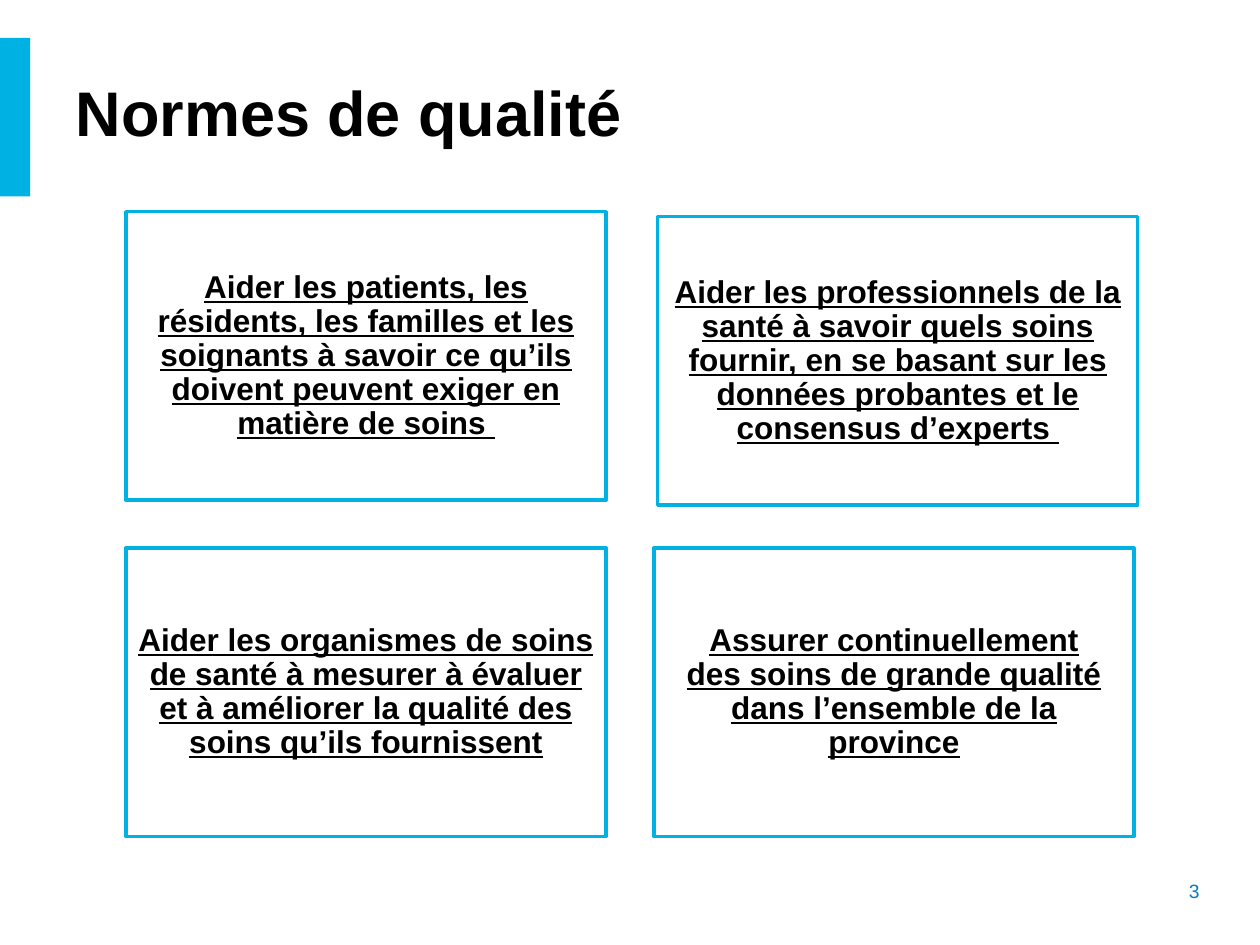
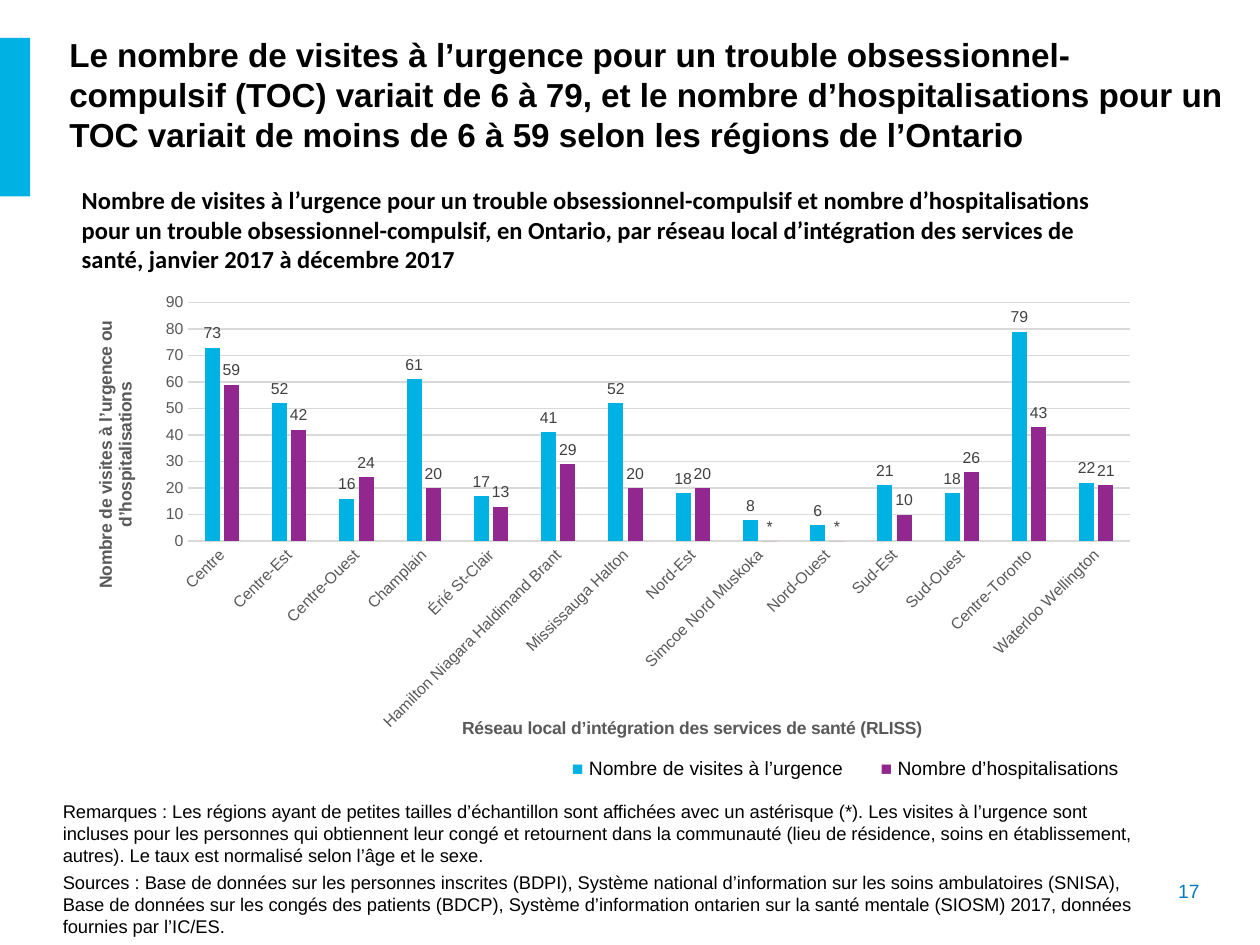
from lxml.etree import SubElement
from pptx import Presentation
from pptx.chart.data import CategoryChartData
from pptx.dml.color import RGBColor
from pptx.enum.chart import XL_CHART_TYPE, XL_LABEL_POSITION, XL_TICK_MARK
from pptx.enum.shapes import MSO_SHAPE
from pptx.enum.text import MSO_ANCHOR, MSO_AUTO_SIZE, PP_ALIGN
from pptx.oxml.ns import qn
from pptx.util import Inches, Pt

COLORS = {
    "text": "000000",
    "accent": "00B2E3",
    "second": "92278F",
    "number": "047BC1",
    "axis": "595959",
    "grid": "D9D9D9",
    "label": "404040",
}
FONT = "Arial"

STANDARDS = [
    (1, 1.68, "Aider les patients, les résidents, les familles et les soignants à savoir "
              "ce qu’ils doivent peuvent exiger en matière de soins "),
    (5.22, 1.72, "Aider les professionnels de la santé à savoir quels soins fournir, en se "
                 "basant sur les données probantes et le consensus d’experts "),
    (1, 4.35, "Aider les organismes de soins de santé à mesurer à évaluer et à améliorer "
              "la qualité des soins qu’ils fournissent"),
    (5.19, 4.35, "Assurer continuellement\ndes soins de grande qualité dans l’ensemble "
                 "de la province"),
]

REGIONS = [
    ("Centre", 73, 59),
    ("Centre-Est", 52, 42),
    ("Centre-Ouest", 16, 24),
    ("Champlain", 61, 20),
    ("Érié St-Clair", 17, 13),
    ("Hamilton Niagara Haldimand Brant", 41, 29),
    ("Mississauga Halton", 52, 20),
    ("Nord-Est", 18, 20),
    ("Simcoe Nord Muskoka", 8, 0),
    ("Nord-Ouest", 6, 0),
    ("Sud-Est", 21, 10),
    ("Sud-Ouest", 18, 26),
    ("Centre-Toronto", 79, 43),
    ("Waterloo Wellington", 22, 21),
]
SERIES = [
    ("Nombre de visites à l’urgence", "accent"),
    ("Nombre d’hospitalisations", "second"),
]

NOTES = [
    "Remarques : Les régions ayant de petites tailles d’échantillon sont affichées avec un "
    "astérisque (*). Les visites à l’urgence sont incluses pour les personnes qui obtiennent "
    "leur congé et retournent dans la communauté (lieu de résidence, soins en établissement, "
    "autres). Le taux est normalisé selon l’âge et le sexe.",
    "Sources : Base de données sur les personnes inscrites (BDPI), Système national "
    "d’information sur les soins ambulatoires (SNISA), Base de données sur les congés des "
    "patients (BDCP), Système d’information ontarien sur la santé mentale (SIOSM) 2017, "
    "données fournies par l’IC/ES.",
]


def rgb(name):
    return RGBColor.from_string(COLORS[name])


def style_font(font, size, color="text", bold=False, name=FONT):
    font.name = name
    font.size = Pt(size)
    font.bold = bold
    font.color.rgb = rgb(color)


def add_span(para, text, size, color="text", bold=False, name=FONT, underline=False):
    for index, line in enumerate(text.split("\n")):
        if index:
            para.add_line_break()
        span = para.add_run()
        span.text = line
        style_font(span.font, size, color, bold, name)
        if underline:
            span.font.underline = True


def add_text_box(page, left, top, width, height):
    box = page.shapes.add_textbox(Inches(left), Inches(top), Inches(width), Inches(height))
    box.text_frame.word_wrap = True
    return box.text_frame


def add_page(deck, number, title, place, size, anchor):
    page = deck.slides.add_slide(deck.slide_layouts[5])
    band = page.shapes.add_shape(MSO_SHAPE.RECTANGLE, 0, Inches(0.3), Inches(0.24), Inches(1.26))
    band.shadow.inherit = False
    band.fill.solid()
    band.fill.fore_color.rgb = rgb("accent")
    band.line.fill.background()

    heading = page.shapes.title
    heading.left, heading.top, heading.width, heading.height = map(Inches, place)
    frame = heading.text_frame
    frame.word_wrap = True
    frame.auto_size = MSO_AUTO_SIZE.NONE
    frame.vertical_anchor = anchor
    para = frame.paragraphs[0]
    para.alignment = PP_ALIGN.LEFT
    add_span(para, title, size, bold=True)

    para = add_text_box(page, 8.45, 6.93, 1.17, 0.29).paragraphs[0]
    para.alignment = PP_ALIGN.RIGHT
    add_span(para, str(number), 11, "number")
    return page


def add_standard(page, left, top, text):
    box = page.shapes.add_shape(
        MSO_SHAPE.RECTANGLE, Inches(left), Inches(top), Inches(3.81), Inches(2.29))
    box.shadow.inherit = False
    box.fill.background()
    box.line.color.rgb = rgb("accent")
    box.line.width = Pt(2)
    frame = box.text_frame
    frame.word_wrap = True
    frame.vertical_anchor = MSO_ANCHOR.MIDDLE
    frame.margin_left = frame.margin_right = Inches(0.07)
    frame.margin_top = frame.margin_bottom = Inches(0.07)
    para = frame.paragraphs[0]
    para.alignment = PP_ALIGN.CENTER
    para.line_spacing = 0.9
    para.space_after = Pt(6.3)
    add_span(para, text, 18, bold=True, underline=True)


def make_layout(parent, **settings):
    for old in parent.findall(qn("c:layout")):
        parent.remove(old)
    layout = SubElement(parent, qn("c:layout"))
    manual = SubElement(layout, qn("c:manualLayout"))
    for tag, value in settings.items():
        SubElement(manual, qn(f"c:{tag}")).set("val", str(value))
    return layout


def style_axis(axis, title, x, y):
    axis.major_tick_mark = XL_TICK_MARK.NONE
    axis.minor_tick_mark = XL_TICK_MARK.NONE
    style_font(axis.tick_labels.font, 9, "axis")
    para = axis.axis_title.text_frame.paragraphs[0]
    add_span(para, title, 10, "axis", bold=True)
    element = axis.axis_title._element
    layout = make_layout(element, xMode="edge", yMode="edge", x=x, y=y)
    element.find(qn("c:tx")).addnext(layout)


def style_series(series, color):
    series.format.fill.solid()
    series.format.fill.fore_color.rgb = rgb(color)
    labels = series.data_labels
    labels.show_value = True
    labels.position = XL_LABEL_POSITION.OUTSIDE_END
    style_font(labels.font, 9, "label")
    for index, value in enumerate(series.values):
        if value == 0:
            label = series.points[index].data_label
            add_span(label.text_frame.paragraphs[0], "*", 9, "label")
            label.position = XL_LABEL_POSITION.OUTSIDE_END


def add_region_chart(page):
    names, visits, stays = zip(*REGIONS)
    data = CategoryChartData()
    data.categories = names
    for (name, color), values in zip(SERIES, (visits, stays)):
        data.add_series(name, values)
    chart = page.shapes.add_chart(
        XL_CHART_TYPE.COLUMN_CLUSTERED,
        Inches(0.55), Inches(2.24), Inches(8.59), Inches(4.03), data).chart
    chart.has_legend = False
    chart.has_title = False
    style_font(chart.font, 10)

    plot = chart.plots[0]
    plot.vary_by_categories = False
    plot.gap_width = 219
    plot.overlap = -27
    for series, (name, color) in zip(plot.series, SERIES):
        style_series(series, color)

    regions, counts = chart.category_axis, chart.value_axis
    style_axis(regions, "Réseau local d’intégration des services de santé (RLISS)", 0.36, 0.85)
    regions.format.line.color.rgb = rgb("grid")
    regions.format.line.width = Pt(0.75)
    regions.tick_labels.font._element.getparent().getparent().getparent().find(
        qn("a:bodyPr")).set("rot", "-2700000")

    style_axis(counts, "Nombre de visites à l’urgence ou d’hospitalisations", 0.02, 0.07)
    counts.minimum_scale, counts.maximum_scale, counts.major_unit = 0, 90, 10
    counts.format.line.fill.background()
    counts.major_gridlines.format.line.color.rgb = rgb("grid")
    counts.major_gridlines.format.line.width = Pt(0.75)

    area = chart._chartSpace.find(qn("c:chart")).find(qn("c:plotArea"))
    area.insert(0, make_layout(area, layoutTarget="inner", xMode="edge", yMode="edge",
                               x=0.11, y=0.04, w=0.87, h=0.47))


def add_legend(page):
    for left, (name, color) in zip((4.44, 6.89), SERIES):
        para = add_text_box(page, left, 5.95, 2.45, 0.26).paragraphs[0]
        add_span(para, "■ ", 11, color)
        add_span(para, name, 11)


def add_notes(page):
    frame = add_text_box(page, 0.4, 6.3, 8.9, 1.21)
    for index, note in enumerate(NOTES):
        para = frame.add_paragraph() if index else frame.paragraphs[0]
        if index:
            para.space_before = Pt(3.15)
        add_span(para, note, 10.5)


def main():
    deck = Presentation()
    deck.slide_width, deck.slide_height = Inches(10), Inches(7.5)

    page = add_page(deck, 3, "Normes de qualité", (0.5, 0.5, 7.81, 0.77), 36, MSO_ANCHOR.MIDDLE)
    for left, top, text in STANDARDS:
        add_standard(page, left, top, text)

    page = add_page(
        deck, 17,
        "Le nombre de visites à l’urgence pour un trouble obsessionnel-compulsif (TOC) variait "
        "de 6 à 79, et le nombre d’hospitalisations pour un TOC variait de moins de 6 à 59 "
        "selon les régions de l’Ontario",
        (0.45, 0.22, 9.37, 1.06), 19, MSO_ANCHOR.TOP)
    add_notes(page)
    para = add_text_box(page, 0.55, 1.42, 8.59, 0.81).paragraphs[0]
    add_span(
        para,
        "Nombre de visites à l’urgence pour un trouble obsessionnel-compulsif et nombre "
        "d’hospitalisations pour un trouble obsessionnel-compulsif, en Ontario, par réseau "
        "local d’intégration des services de santé, janvier 2017 à décembre 2017",
        14, bold=True, name="Calibri")
    add_region_chart(page)
    add_legend(page)

    deck.save("out.pptx")


if __name__ == "__main__":
    main()
